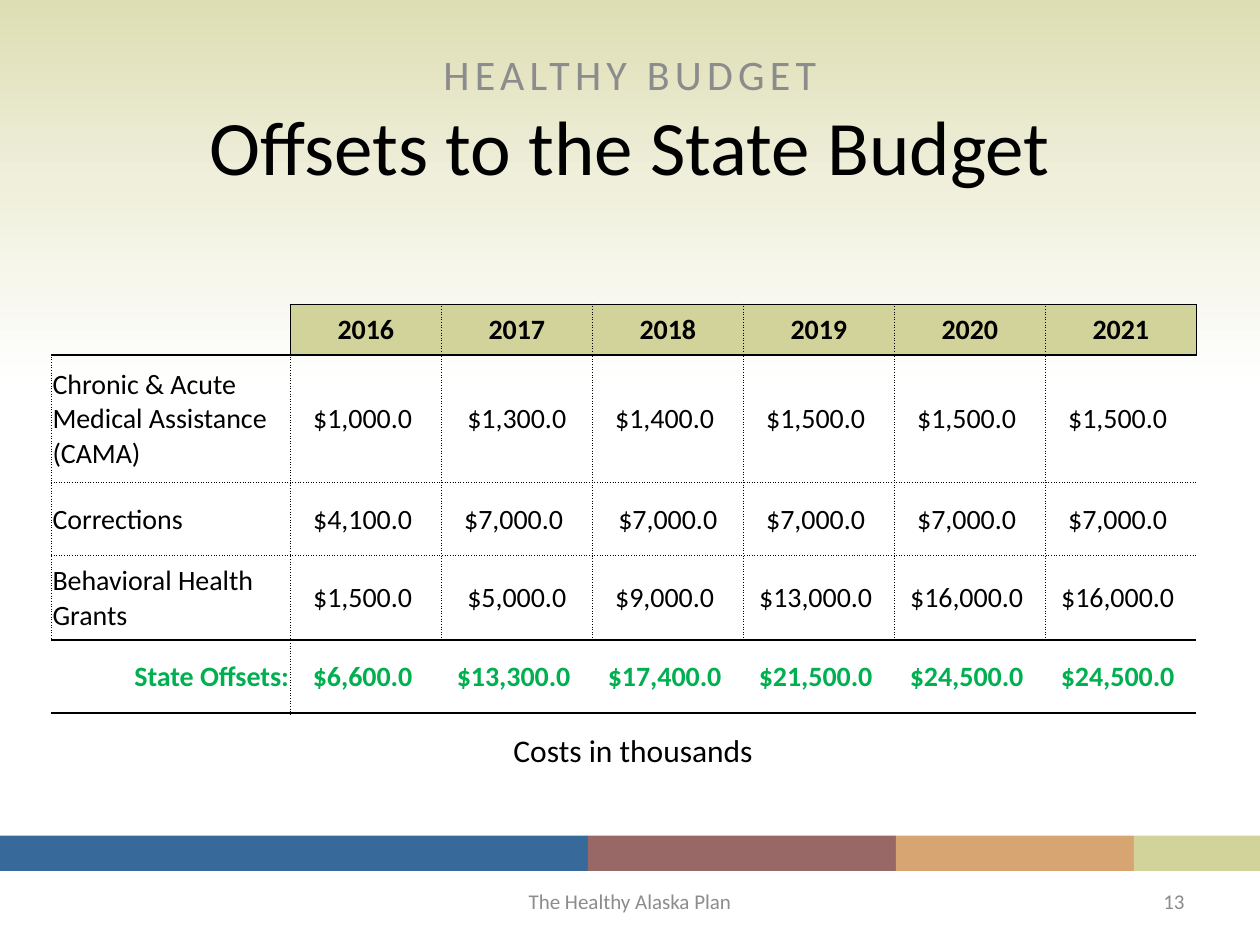
"""Build the slide on offsets to the state budget."""
import dataclasses

import pptx
import pptx.dml.color
import pptx.enum.shapes
import pptx.enum.text
import pptx.oxml
import pptx.oxml.ns
import pptx.util

Pt = pptx.util.Pt
Align = pptx.enum.text.PP_ALIGN
Anchor = pptx.enum.text.MSO_ANCHOR
qn = pptx.oxml.ns.qn


@dataclasses.dataclass(frozen=True)
class Theme:
    font: str = "Calibri"
    black: str = "000000"
    gray: str = "8C8C8C"
    green: str = "00B050"
    white: str = "FFFFFF"
    olive: str = "D2D39A"
    blue: str = "37699A"
    plum: str = "986866"
    sand: str = "D7A572"
    fade: tuple = ((0, "DDDEB3"), (19, "EFEFDB"), (41, "FFFFFF"))
    title: int = 44
    top: int = 24
    note: int = 18
    body: int = 16
    foot: int = 12


def tint(code):
    return pptx.dml.color.RGBColor.from_string(code)


def write(frame, text, size, color, font, align=Align.CENTER, bold=False, space=0, above=0):
    para = frame.paragraphs[0]
    para.alignment = align
    para.space_before = Pt(above)
    run = para.add_run()
    run.text = text
    run.font.name = font
    run.font.size = Pt(size)
    run.font.bold = bold
    run.font.color.rgb = tint(color)
    if space:
        run.font._element.set("spc", str(space * 100))


def edge(cell, side, kind):
    props = cell._tc.get_or_add_tcPr()
    line = pptx.oxml.parse_xml(f'<a:ln{side} {pptx.oxml.ns.nsdecls("a")}/>')
    props.append(line)
    if kind == "-":
        line.append(line.makeelement(qn("a:noFill")))
        return
    line.set("w", str(Pt(1 if kind == "s" else 0.5)))
    fill = line.makeelement(qn("a:solidFill"))
    line.append(fill)
    fill.append(fill.makeelement(qn("a:srgbClr"), {"val": Theme.black}))
    dash = "solid" if kind == "s" else "dot"
    line.append(line.makeelement(qn("a:prstDash"), {"val": dash}))


class Deck:
    def __init__(self, theme):
        self.theme = theme
        self.file = pptx.Presentation()
        self.file.slide_width, self.file.slide_height = Pt(720), Pt(540)
        self.slide = self.file.slides.add_slide(self.file.slide_layouts[6])

    def back(self):
        fill = self.slide.background.fill
        fill.gradient()
        fill.gradient_angle = 270
        stops = self.slide.element.find(".//" + qn("a:gsLst"))
        for stop in list(stops):
            stops.remove(stop)
        for spot, code in self.theme.fade:
            stop = stops.makeelement(qn("a:gs"), {"pos": str(spot * 1000)})
            stop.append(stop.makeelement(qn("a:srgbClr"), {"val": code}))
            stops.append(stop)

    def band(self, left, top, width, height, color):
        kind = pptx.enum.shapes.MSO_SHAPE.RECTANGLE
        shape = self.slide.shapes.add_shape(kind, Pt(left), Pt(top), Pt(width), Pt(height))
        shape.shadow.inherit = False
        shape.fill.solid()
        shape.fill.fore_color.rgb = tint(color)
        shape.line.fill.background()

    def text(self, text, left, top, width, height, size, color, anchor=Anchor.MIDDLE, wrap=True, **form):
        box = self.slide.shapes.add_textbox(Pt(left), Pt(top), Pt(width), Pt(height))
        frame = box.text_frame
        frame.word_wrap = wrap
        frame.vertical_anchor = anchor
        write(frame, text, size, color, self.theme.font, **form)

    def table(self, left, top, wide, high, rows, cross, down):
        shape = self.slide.shapes.add_table(
            len(high), len(wide), Pt(left), Pt(top), Pt(sum(wide)), Pt(sum(high)))
        grid = shape.table
        grid.first_row = grid.horz_banding = False
        for col, width in zip(grid.columns, wide):
            col.width = Pt(width)
        for row, height in zip(grid.rows, high):
            row.height = Pt(height)
        for r, row in enumerate(rows):
            for c, text in enumerate(row):
                cell = grid.cell(r, c)
                edge(cell, "L", down[r][c])
                edge(cell, "R", down[r][c + 1])
                edge(cell, "T", cross[r][c])
                edge(cell, "B", cross[r + 1][c])
                self.cell(cell, text, r == 0, r == len(rows) - 1, c == 0)

    def cell(self, cell, text, head, total, label):
        look = self.theme
        cell.margin_left = cell.margin_right = cell.margin_top = Pt(0.72)
        cell.margin_bottom = 0
        cell.vertical_anchor = Anchor.MIDDLE
        if total or (head and not label):
            cell.fill.solid()
            cell.fill.fore_color.rgb = tint(look.white if total else look.olive)
        else:
            cell.fill.background()
        if not text:
            return
        side = Align.RIGHT if total else Align.LEFT
        write(cell.text_frame, text, look.body, look.green if total else look.black, look.font,
              align=side if label else Align.CENTER, bold=head or total)


def main():
    look = Theme()
    deck = Deck(look)
    deck.back()

    ends = [0, 336, 512, 648, 720]
    tones = [look.blue, look.plum, look.sand, look.olive]
    for left, right, tone in zip(ends, ends[1:], tones):
        deck.band(left, 477.5, right - left, 20.2, tone)

    deck.text("HEALTHY BUDGET", 36, 24, 648, 30, look.top, look.gray,
              anchor=Anchor.TOP, space=3, above=2)
    deck.text("Offsets to the State Budget", 36, 54, 648, 57.6, look.title, look.black)
    deck.text("The Healthy Alaska Plan", 246, 500.5, 228, 28.8, look.foot, look.gray)
    deck.text("13", 516, 500.5, 168, 28.8, look.foot, look.gray, align=Align.RIGHT)
    deck.text("Costs in thousands", 285.5, 414, 152.6, 29, look.note, look.black,
              anchor=Anchor.TOP, wrap=False)

    rows = [
        ["", "2016", "2017", "2018", "2019", "2020", "2021"],
        ["Chronic & Acute Medical Assistance (CAMA)", "$1,000.0 ", "$1,300.0",
         "$1,400.0 ", "$1,500.0 ", "$1,500.0 ", "$1,500.0 "],
        ["Corrections", "$4,100.0 ", "$7,000.0 ", "$7,000.0",
         "$7,000.0 ", "$7,000.0 ", "$7,000.0 "],
        ["Behavioral Health Grants", "$1,500.0 ", "$5,000.0",
         "$9,000.0 ", "$13,000.0 ", "$16,000.0 ", "$16,000.0 "],
        ["State Offsets:", "$6,600.0 ", "$13,300.0 ", "$17,400.0 ",
         "$21,500.0 ", "$24,500.0 ", "$24,500.0 "],
    ]
    solid, dots = "s" * 7, "." * 7
    cross = ["-ssssss", solid, dots, dots, solid, solid]
    down = ["-s.....s"] + [dots + "-"] * 3 + ["-.------"]
    deck.table(29.3, 174, [136.6] + [86.3] * 6, [28.8, 72.8, 41.8, 48.4, 41.8], rows, cross, down)
    deck.file.save("out.pptx")


if __name__ == "__main__":
    main()
